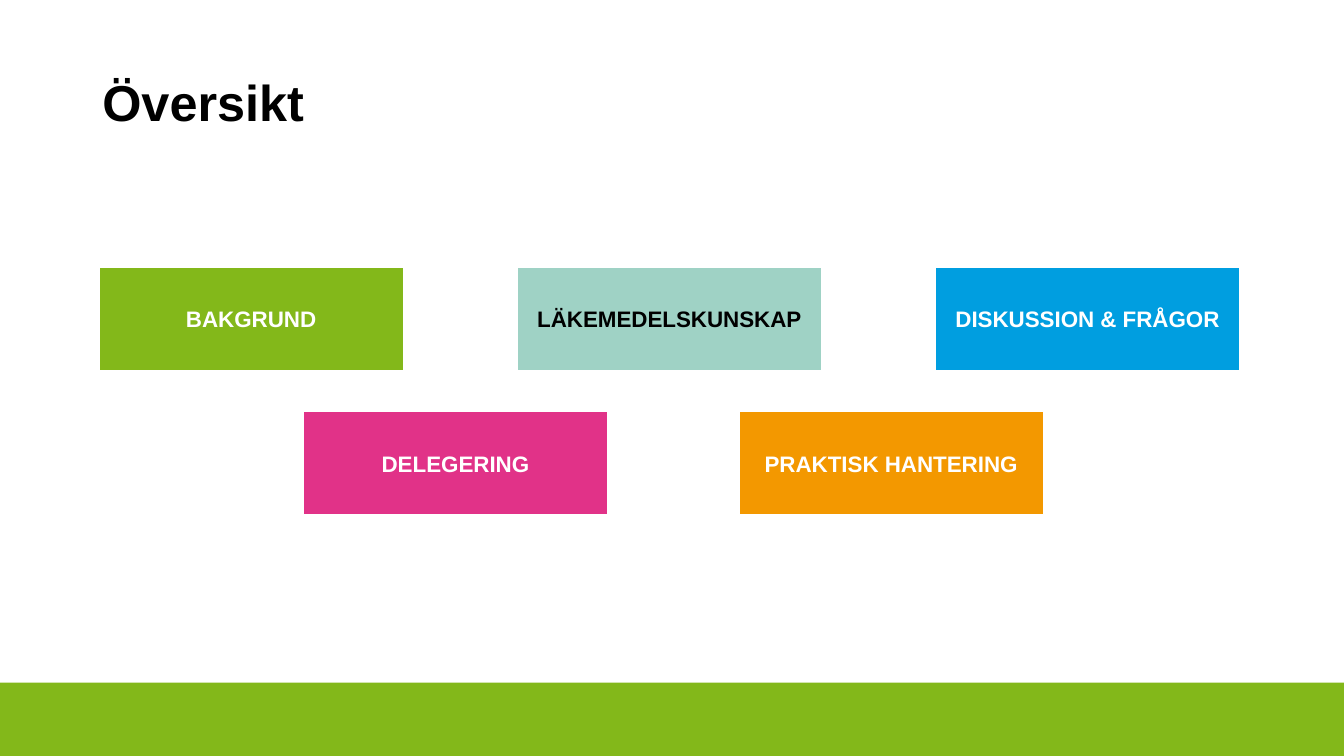
from lxml import etree
from pptx import Presentation
from pptx.dml.color import RGBColor
from pptx.enum.shapes import MSO_SHAPE
from pptx.enum.text import MSO_ANCHOR, PP_ALIGN
from pptx.oxml.ns import qn
from pptx.util import Cm, Pt

RECT = MSO_SHAPE.RECTANGLE
DIAG_RECT = MSO_SHAPE.ROUND_2_DIAG_RECTANGLE
MIDDLE = MSO_ANCHOR.MIDDLE
TOP = MSO_ANCHOR.TOP
CENTER = PP_ALIGN.CENTER

GREEN = RGBColor(0x83, 0xB8, 0x1A)
PINK = RGBColor(0xE1, 0x32, 0x88)
MINT = RGBColor(0x9F, 0xD2, 0xC5)
ORANGE = RGBColor(0xF3, 0x98, 0x00)
BLUE = RGBColor(0x00, 0x9E, 0xE0)
BLACK = RGBColor(0x00, 0x00, 0x00)
WHITE = RGBColor(0xFF, 0xFF, 0xFF)

UPPER_ROW, LOWER_ROW = 6.86, 10.49
TOPICS = [
    ("BAKGRUND", 2.62, UPPER_ROW, GREEN, WHITE),
    ("DELEGERING", 7.77, LOWER_ROW, PINK, WHITE),
    ("LÄKEMEDELSKUNSKAP", 13.16, UPPER_ROW, MINT, BLACK),
    ("PRAKTISK HANTERING", 18.75, LOWER_ROW, ORANGE, WHITE),
    ("DISKUSSION & FRÅGOR", 23.7, UPPER_ROW, BLUE, WHITE),
]


def write(tf, text, size, color):
    tf.word_wrap = True
    p = tf.paragraphs[0]
    p.text = text
    p.font.name = "Arial"
    p.font.size = Pt(size)
    p.font.bold = True
    p.font.color.rgb = color
    return p


prs = Presentation()
prs.slide_width = Cm(33.87)
prs.slide_height = Cm(19.05)
s = prs.slides.add_slide(prs.slide_layouts[6])

band = s.shapes.add_shape(RECT, 0, Cm(17.2), prs.slide_width, Cm(1.85))
band.shadow.inherit = False
band.fill.solid()
band.fill.fore_color.rgb = GREEN
band.line.fill.background()

title = s.shapes.add_textbox(Cm(2.33), Cm(1.83), Cm(29.21), Cm(3.02))
title.text_frame.vertical_anchor = TOP
p = write(title.text_frame, "Översikt", 36, BLACK)
p.line_spacing = 0.9

for text, left, top, fill, color in TOPICS:
    sp = s.shapes.add_shape(DIAG_RECT, Cm(left), Cm(top), Cm(7.42), Cm(2.36))
    sp.adjustments[0] = 0
    sp.adjustments[1] = 0
    sp.shadow.inherit = False
    sp.fill.solid()
    sp.fill.fore_color.rgb = fill
    sp.line.color.rgb = fill
    sp.line.width = Pt(6)
    etree.SubElement(sp.line._get_or_add_ln(), qn("a:miter"), lim="800000")
    sp.text_frame.vertical_anchor = MIDDLE
    p = write(sp.text_frame, text, 16, color)
    p.alignment = CENTER

prs.save("out.pptx")
